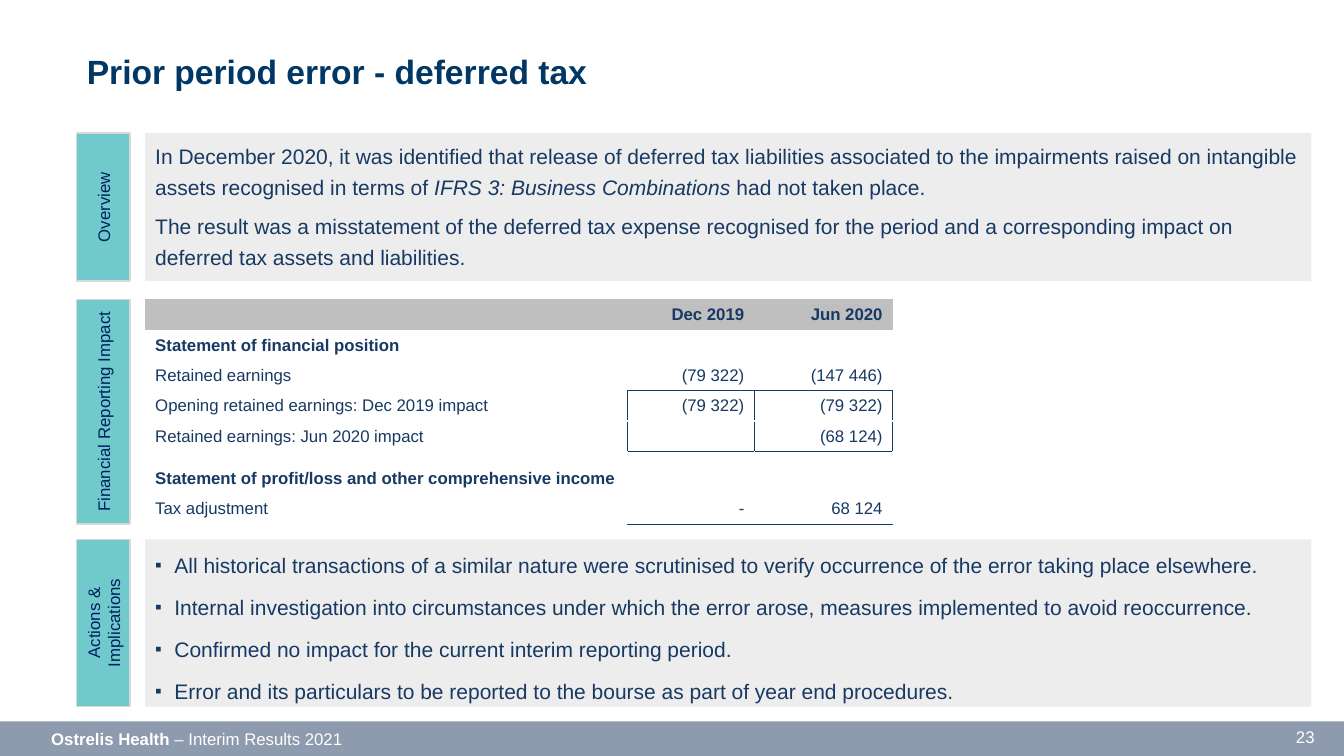
from lxml import etree
from pptx import Presentation
from pptx.dml.color import RGBColor
from pptx.enum import shapes, text
from pptx.oxml import ns
from pptx.util import Pt

NAVY = RGBColor(0x17, 0x39, 0x63)
TITLE_BLUE = RGBColor(0x00, 0x37, 0x64)
LABEL_BLUE = RGBColor(0x00, 0x20, 0x60)
TEAL = RGBColor(0x70, 0xCA, 0xCB)
OUTLINE = RGBColor(0xD9, 0xD9, 0xD9)
PANEL = RGBColor(0xED, 0xED, 0xED)
HEADER = RGBColor(0xBF, 0xBF, 0xBF)
SLATE = RGBColor(0x8E, 0x9A, 0xAD)
WHITE = RGBColor(0xFF, 0xFF, 0xFF)

PANEL_LEFT, PANEL_WIDTH = 103.7, 833
LABEL_CENTRE, LABEL_THICKNESS = 73.9, 38.2
SECTIONS = [
    ("Overview", 95, 105.8),
    ("Financial Reporting Impact", 213.8, 160.6),
    ("Actions & Implications", 385.2, 119.5),
]


def add_span(para, words, size, colour, bold=False, italic=False):
    span = para.add_run()
    span.text = words
    span.font.name = "Arial"
    span.font.size = Pt(size)
    span.font.color.rgb = colour
    span.font.bold = bold
    span.font.italic = italic


def add_node(parent, tag, **attributes):
    return etree.SubElement(parent, ns.qn(tag), attributes)


deck = Presentation()
deck.slide_width = Pt(960)
deck.slide_height = Pt(540)
page = deck.slides.add_slide(deck.slide_layouts[3])

title = page.shapes.title
title.left, title.top, title.width, title.height = Pt(62), Pt(28.8), Pt(478), Pt(36.7)
frame = title.text_frame
frame.margin_left = frame.margin_top = frame.margin_right = frame.margin_bottom = 0
frame.vertical_anchor = text.MSO_ANCHOR.BOTTOM
frame.auto_size = text.MSO_AUTO_SIZE.NONE
frame.paragraphs[0].alignment = text.PP_ALIGN.LEFT
add_span(frame.paragraphs[0], "Prior period error - deferred tax", 24, TITLE_BLUE, bold=True)

for name, top, length in SECTIONS:
    label = page.shapes.add_shape(
        shapes.MSO_SHAPE.RECTANGLE,
        Pt(LABEL_CENTRE - length / 2), Pt(top + (length - LABEL_THICKNESS) / 2),
        Pt(length), Pt(LABEL_THICKNESS))
    label.rotation = 270
    label.shadow.inherit = False
    label.fill.solid()
    label.fill.fore_color.rgb = TEAL
    label.line.color.rgb = OUTLINE
    label.line.width = Pt(1)
    frame = label.text_frame
    frame.word_wrap = True
    frame.vertical_anchor = text.MSO_ANCHOR.MIDDLE
    frame.margin_left = frame.margin_top = frame.margin_right = frame.margin_bottom = Pt(2.9)
    frame.paragraphs[0].alignment = text.PP_ALIGN.CENTER
    add_span(frame.paragraphs[0], name, 12, LABEL_BLUE)

overview = [
    [("In December 2020, it was identified that release of deferred tax liabilities associated "
      "to the impairments raised on intangible assets recognised in terms of ", False),
     ("IFRS 3: Business Combinations ", True),
     ("had not taken place.", False)],
    [("The result was a misstatement of the deferred tax expense recognised for the period and "
      "a corresponding impact on deferred tax assets and liabilities.", False)],
]
actions = [
    [("All historical transactions of a similar nature were scrutinised to verify occurrence "
      "of the error taking place elsewhere.", False)],
    [("Internal investigation into circumstances under which the error arose, measures "
      "implemented to avoid reoccurrence.", False)],
    [("Confirmed no impact for the current interim reporting period.", False)],
    [("Error and its particulars to be reported to the bourse as part of year end procedures.",
      False)],
]
panels = [(1, SECTIONS[0], overview, 22, False), (2, SECTIONS[2], actions, 24, True)]
for index, (name, top, height), paragraphs, spacing, bulleted in panels:
    box = page.placeholders[index]
    box.left, box.top, box.width, box.height = Pt(PANEL_LEFT), Pt(top), Pt(PANEL_WIDTH), Pt(height)
    box.fill.solid()
    box.fill.fore_color.rgb = PANEL
    frame = box.text_frame
    frame.auto_size = text.MSO_AUTO_SIZE.NONE
    for number, pieces in enumerate(paragraphs):
        para = frame.add_paragraph() if number else frame.paragraphs[0]
        properties = para._p.get_or_add_pPr()
        indent = Pt(13.7) if bulleted else 0
        properties.set("marL", str(indent))
        properties.set("indent", str(-indent))
        if bulleted:
            add_node(add_node(properties, "a:buClr"), "a:srgbClr", val=str(NAVY))
            add_node(properties, "a:buSzPct", val="90000")
            add_node(properties, "a:buFont", typeface="Arial")
            add_node(properties, "a:buChar", char="▪")
        else:
            add_node(properties, "a:buNone")
        para.line_spacing = Pt(spacing)
        para.space_before = Pt(6 if number else 0)
        for words, italic in pieces:
            add_span(para, words, 15, NAVY, italic=italic)

rows = [
    ("", "Dec 2019", "Jun 2020"),
    ("Statement of financial position", "", ""),
    ("Retained earnings", "(79 322)", "(147 446)"),
    ("Opening retained earnings: Dec 2019 impact", "(79 322)", "(79 322)"),
    ("Retained earnings: Jun 2020 impact", "", "(68 124)"),
    ("", "", ""),
    ("Statement of profit/loss and other comprehensive income", "", ""),
    ("Tax adjustment", "-", "68 124"),
]
BOLD_ROWS, BOXED_ROWS, RULES, GAP_ROW = (0, 1, 6), (3, 4), (3, 5, 8), 5
column_widths = [344.5, 90.7, 98.8]
name, top, height = SECTIONS[1]
table = page.shapes.add_table(
    len(rows), 3, Pt(PANEL_LEFT), Pt(top), Pt(sum(column_widths)), Pt(height)).table
table.first_row = False
table.horz_banding = False
for column, width in zip(table.columns, column_widths):
    column.width = Pt(width)
for r, values in enumerate(rows):
    table.rows[r].height = Pt(8.4 if r == GAP_ROW else 21.6)
    for c, value in enumerate(values):
        cell = table.cell(r, c)
        edges = [
            ("a:lnL", r in BOXED_ROWS and c > 0, r == 0),
            ("a:lnR", r in BOXED_ROWS, r == 0),
            ("a:lnT", r in RULES and c > 0, r < 2),
            ("a:lnB", r + 1 in RULES and c > 0, r == 0),
        ]
        for tag, dark, hidden in edges:
            line = add_node(cell._tc.get_or_add_tcPr(), tag, w=str(Pt(0.75 if dark else 1)))
            if hidden:
                add_node(line, "a:noFill")
            else:
                colour = NAVY if dark else WHITE
                add_node(add_node(line, "a:solidFill"), "a:srgbClr", val=str(colour))
        if r == 0:
            cell.fill.solid()
            cell.fill.fore_color.rgb = HEADER
        else:
            cell.fill.background()
        cell.vertical_anchor = text.MSO_ANCHOR.MIDDLE
        para = cell.text_frame.paragraphs[0]
        para.alignment = text.PP_ALIGN.RIGHT if c else text.PP_ALIGN.LEFT
        if r == GAP_ROW:
            cell.margin_top = cell.margin_bottom = 0
        if value:
            add_span(para, value, 12, NAVY, bold=r in BOLD_ROWS)
        else:
            para.font.size = Pt(1 if r == GAP_ROW else 12)

bar = page.shapes.add_shape(shapes.MSO_SHAPE.RECTANGLE, 0, Pt(515.3), Pt(960), Pt(24.7))
bar.shadow.inherit = False
bar.fill.solid()
bar.fill.fore_color.rgb = SLATE
bar.line.fill.background()

footers = [
    (29.5, 517, 426, text.PP_ALIGN.LEFT,
     [("Ostrelis Health", True), (" – Interim Results 2021", False)]),
    (684.7, 515.5, 261.4, text.PP_ALIGN.RIGHT, [("23", False)]),
]
for left, top, width, alignment, pieces in footers:
    box = page.shapes.add_textbox(Pt(left), Pt(top), Pt(width), Pt(21.8))
    box.text_frame.word_wrap = True
    para = box.text_frame.paragraphs[0]
    para.alignment = alignment
    for words, bold in pieces:
        add_span(para, words, 12, WHITE, bold=bold)

deck.save("out.pptx")
